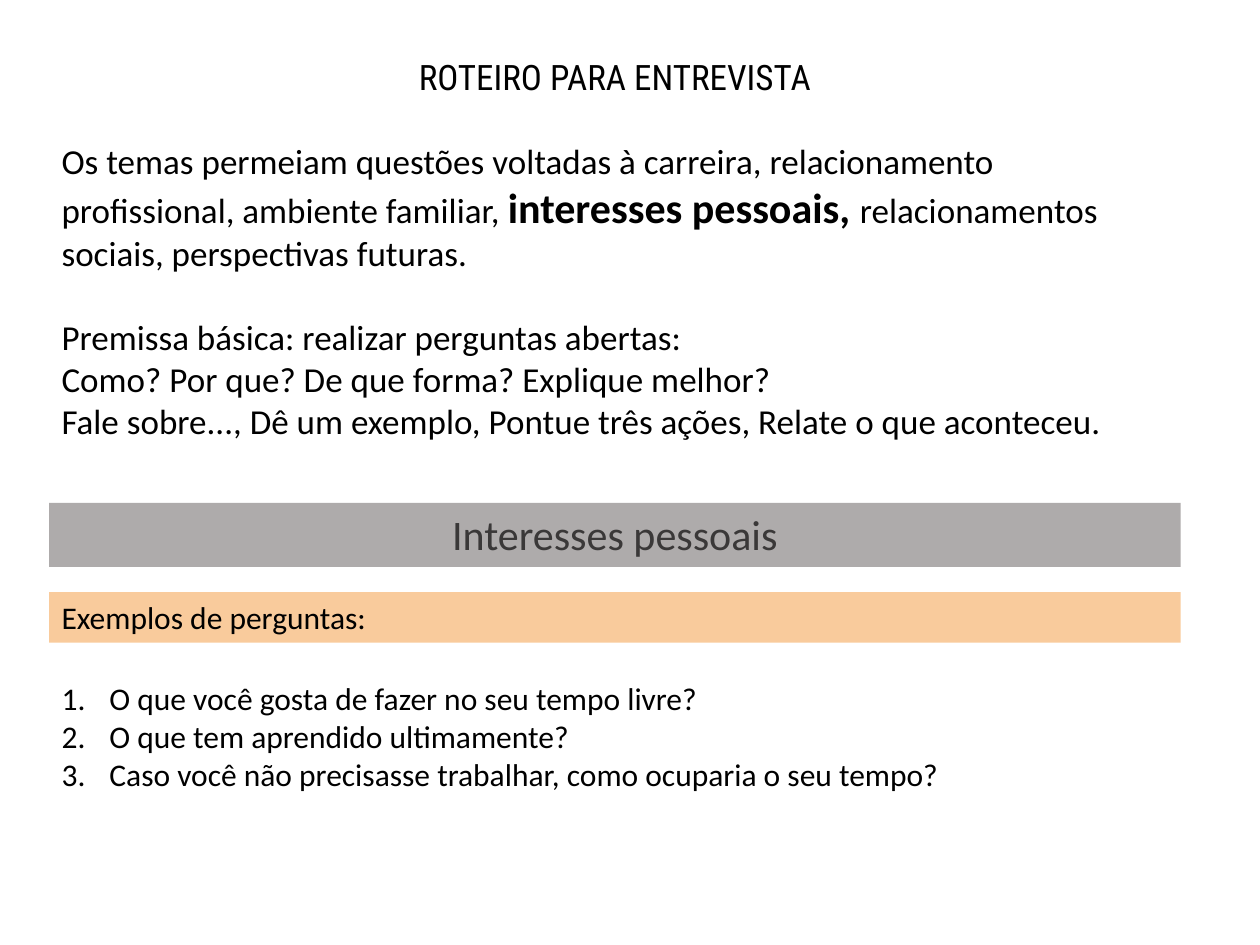
from pptx import Presentation
from pptx.dml.color import RGBColor
from pptx.enum.shapes import MSO_SHAPE
from pptx.enum.text import MSO_ANCHOR, PP_ALIGN
from pptx.oxml.ns import qn
from pptx.util import Inches, Pt
from lxml.etree import SubElement

BLACK = RGBColor(0x00, 0x00, 0x00)
CHARCOAL = RGBColor(0x3A, 0x38, 0x38)
GRAY = RGBColor(0xAE, 0xAB, 0xAB)
PEACH = RGBColor(0xF9, 0xCB, 0x9C)

TITLE = "ROTEIRO PARA ENTREVISTA"
THEMES = [
    ("Os temas permeiam questões voltadas à carreira, relacionamento "
     "profissional, ambiente familiar, ", False),
    ("interesses pessoais, ", True),
    ("relacionamentos sociais, perspectivas futuras.", False),
]
PREMISE = [
    "Premissa básica: realizar perguntas abertas:",
    "Como? Por que? De que forma? Explique melhor?",
    "Fale sobre..., Dê um exemplo, Pontue três ações, Relate o que aconteceu.",
]
SECTION = "Interesses pessoais"
EXAMPLES = "Exemplos de perguntas:"
QUESTIONS = [
    "O que você gosta de fazer no seu tempo livre?",
    "O que tem aprendido ultimamente?",
    "Caso você não precisasse trabalhar, como ocuparia o seu tempo?",
]

LEFT, WIDTH = 0.39, 8.98
BODY, STRONG, SMALL = 20, 24, 18
LINE_GAP = Pt(24)
INDENT = Inches(0.38)

prs = Presentation()
prs.slide_width, prs.slide_height = Inches(10), Inches(7.5)
s = prs.slides.add_slide(prs.slide_layouts[6])


def add_block(top, height, fill=None):
    """Add a full-width block, a filled bar or a plain text box; return its text frame."""
    box = [Inches(v) for v in (LEFT, top, WIDTH, height)]
    if fill is None:
        sp = s.shapes.add_textbox(*box)
    else:
        sp = s.shapes.add_shape(MSO_SHAPE.RECTANGLE, *box)
        sp.shadow.inherit = False
        sp.fill.solid()
        sp.fill.fore_color.rgb = fill
        sp.line.fill.background()
    tf = sp.text_frame
    tf.word_wrap = True
    tf.vertical_anchor = MSO_ANCHOR.TOP
    return tf


def add_run(p, text, size, color=BLACK, font="Calibri", bold=False):
    r = p.add_run()
    r.text = text
    r.font.size, r.font.name, r.font.bold = Pt(size), font, bold
    r.font.color.rgb = color


def number(p):
    pPr = p._p.get_or_add_pPr()
    pPr.set("marL", str(INDENT))
    pPr.set("indent", str(-INDENT))
    SubElement(pPr, qn("a:buAutoNum"), type="arabicPeriod")


# Section bars
for text, top, height, fill, size, color, align in [
    (SECTION, 3.99, 0.51, GRAY, STRONG, CHARCOAL, PP_ALIGN.CENTER),
    (EXAMPLES, 4.7, 0.4, PEACH, SMALL, BLACK, PP_ALIGN.LEFT),
]:
    p = add_block(top, height, fill).paragraphs[0]
    p.alignment = align
    add_run(p, text, size, color)

# Numbered questions
tf = add_block(5.34, 1.01)
for i, question in enumerate(QUESTIONS):
    p = tf.add_paragraph() if i else tf.paragraphs[0]
    number(p)
    add_run(p, question, SMALL)

# Title and introduction
tf = add_block(0.39, 3.6)
p = tf.paragraphs[0]
p.alignment = PP_ALIGN.CENTER
add_run(p, TITLE, BODY, font="Roboto Condensed")

p = tf.add_paragraph()
p.space_before = LINE_GAP
for text, strong in THEMES:
    add_run(p, text, STRONG if strong else BODY, bold=strong)

for i, line in enumerate(PREMISE):
    p = tf.add_paragraph()
    p.space_before = Pt(0) if i else LINE_GAP
    add_run(p, line, BODY)

prs.save("out.pptx")
